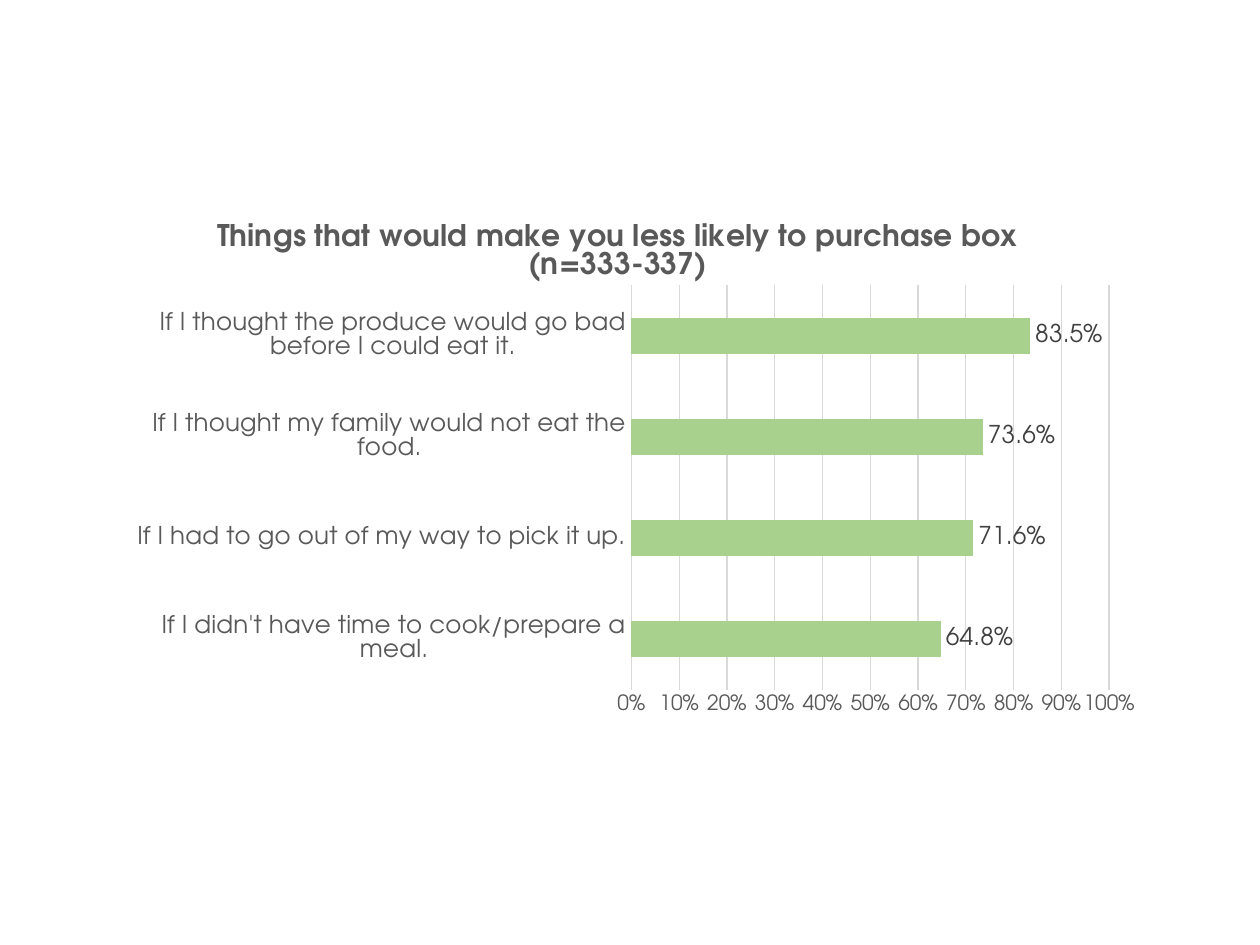
from dataclasses import dataclass

from lxml import etree
from pptx import Presentation
from pptx import util as u
from pptx.chart.data import CategoryChartData
from pptx.dml.color import RGBColor
from pptx.enum import chart as ch
from pptx.oxml.ns import qn

FACE = "TeX Gyre Adventor"
HUES = {"bar": "A9D18E", "grid": "D9D9D9", "text": "595959", "label": "404040"}
TITLE = "Things that would make you less likely to purchase box (n=333-337)"


@dataclass
class Reason:
    text: str
    share: float


# Listed from the bottom bar up
REASONS = [
    Reason("If I didn't have time to cook/prepare a meal.", 0.648),
    Reason("If I had to go out of my way to pick it up.", 0.716),
    Reason("If I thought my family would not eat the food.", 0.736),
    Reason("If I thought the produce would go bad before I could eat it.", 0.835),
]


def assign(item, **vals) -> None:
    for name, val in vals.items():
        setattr(item, name, val)


def style(font, size: float, hue: str, bold: bool = False) -> None:
    assign(font, name=FACE, size=u.Pt(size), bold=bold)
    font.color.rgb = RGBColor.from_string(HUES[hue])


def rule(line) -> None:
    line.width = u.Pt(0.75)
    line.color.rgb = RGBColor.from_string(HUES["grid"])


def place(owner, prior, **vals) -> None:
    """Lay out a chart part by fractions, just after its prior child."""
    spot = owner.find(qn("c:layout"))
    if spot is not None:
        owner.remove(spot)
    spot = etree.Element(qn("c:layout"))
    owner.insert(0 if prior is None else owner.index(prior) + 1, spot)
    box = etree.SubElement(spot, qn("c:manualLayout"))
    for name, val in vals.items():
        etree.SubElement(box, qn(f"c:{name}")).set("val", str(val))


def draw_chart(slide) -> None:
    data = CategoryChartData(number_format="0.0%")
    data.categories = [r.text for r in REASONS]
    data.add_series("Series 1", [r.share for r in REASONS])
    spot = [u.Inches(n) for n in (0.83, 1.71, 8.5, 4.47)]
    chart = slide.shapes.add_chart(ch.XL_CHART_TYPE.BAR_CLUSTERED, *spot, data).chart
    chart.has_legend = False
    assign(chart.font, name="Calibri", size=u.Pt(10))

    # Title
    frame = chart.chart_title.text_frame
    frame.text = TITLE
    style(frame.paragraphs[0].runs[0].font, 17, "text", True)
    title = chart.chart_title._element
    place(title, title.find(qn("c:tx")), xMode="edge", yMode="edge", x=0.1, y=0)

    # Plot area
    place(chart._chartSpace.chart.plotArea, None, layoutTarget="inner",
          xMode="edge", yMode="edge", x=0.492, y=0.124, w=0.446, h=0.718)

    # Axes
    none = ch.XL_TICK_MARK.NONE
    cat, val = chart.category_axis, chart.value_axis
    for axis, size in ((cat, 14), (val, 12)):
        assign(axis, major_tick_mark=none, minor_tick_mark=none)
        style(axis.tick_labels.font, size, "text")
    rule(cat.format.line)
    assign(val, minimum_scale=0, maximum_scale=1, major_unit=0.1,
           has_major_gridlines=True)
    val.format.line.fill.background()
    rule(val.major_gridlines.format.line)
    assign(val.tick_labels, number_format="0%", number_format_is_linked=False)

    # Bars and their labels
    plot = chart.plots[0]
    assign(plot, gap_width=182, vary_by_categories=False)
    bars = plot.series[0]
    bars.format.fill.solid()
    bars.format.fill.fore_color.rgb = RGBColor.from_string(HUES["bar"])
    labels = bars.data_labels
    assign(labels, show_value=True, number_format="0.0%",
           number_format_is_linked=False,
           position=ch.XL_LABEL_POSITION.OUTSIDE_END)
    style(labels.font, 14, "label")


def main() -> None:
    deck = Presentation()
    assign(deck, slide_width=u.Inches(10), slide_height=u.Inches(7.5))
    draw_chart(deck.slides.add_slide(deck.slide_layouts[6]))
    deck.save("out.pptx")


if __name__ == "__main__":
    main()
